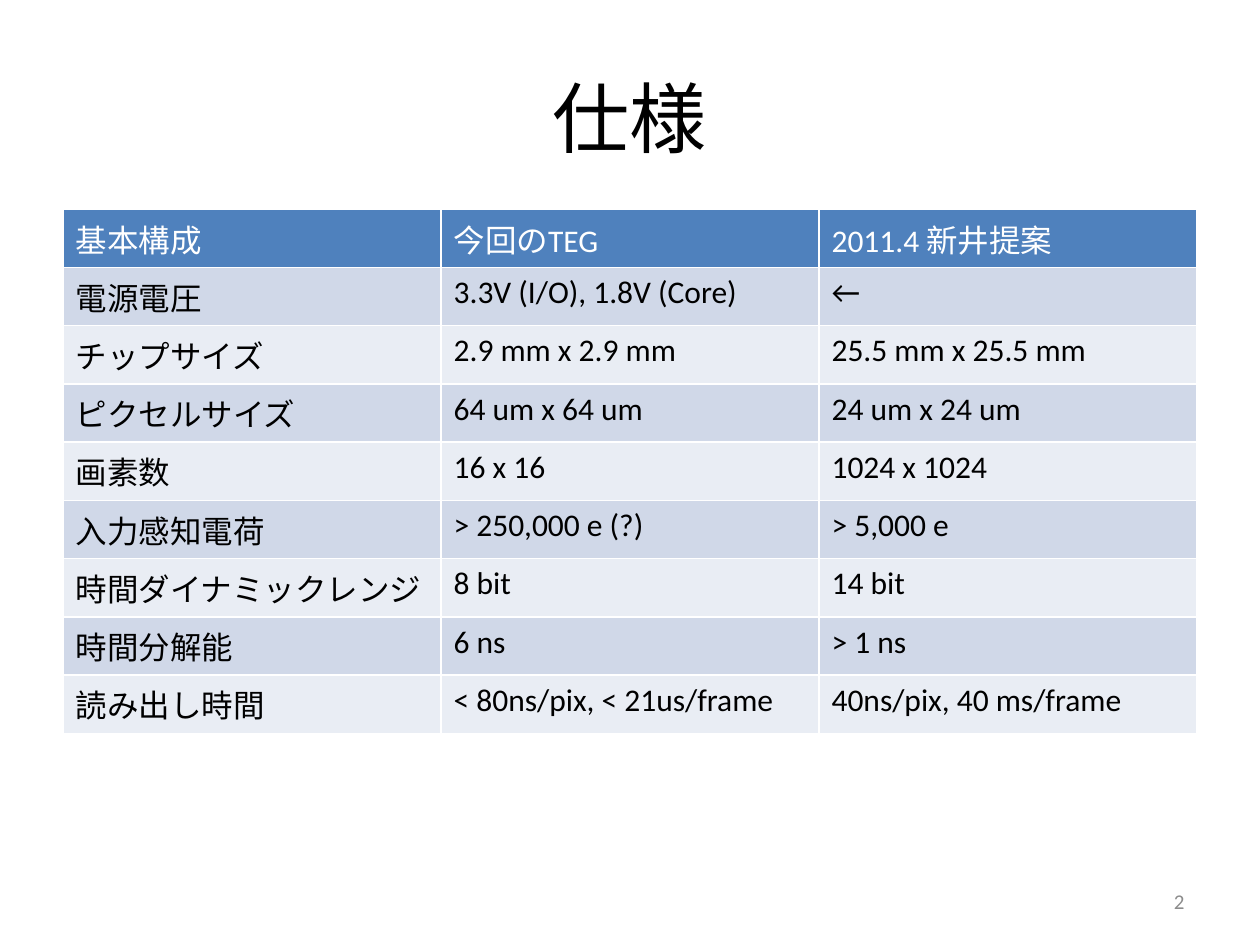
"""Build the specification comparison slide."""
import pptx
import pptx.dml.color
import pptx.enum.text
import pptx.util

RGBColor = pptx.dml.color.RGBColor
Align = pptx.enum.text.PP_ALIGN
Anchor = pptx.enum.text.MSO_ANCHOR

BLACK = RGBColor(0x00, 0x00, 0x00)
WHITE = RGBColor(0xFF, 0xFF, 0xFF)
GRAY = RGBColor(0x8C, 0x8C, 0x8C)
HEADER_BLUE = RGBColor(0x4F, 0x81, 0xBD)
BANDS = (RGBColor(0xD0, 0xD8, 0xE8), RGBColor(0xE9, 0xED, 0xF4))

WIDTH, HEIGHT = 10, 7.5
MARGIN = 0.05 * WIDTH
CONTENT_WIDTH = WIDTH - 2 * MARGIN
ROW_HEIGHT = 0.41

SPECIFICATIONS = (
    ("基本構成", "今回のTEG", "2011.4 新井提案"),
    ("電源電圧", "3.3V (I/O), 1.8V (Core)", "←"),
    ("チップサイズ", "2.9 mm x 2.9 mm", "25.5 mm x 25.5 mm"),
    ("ピクセルサイズ", "64 um x 64 um", "24 um x 24 um"),
    ("画素数", "16 x 16", "1024 x 1024"),
    ("入力感知電荷", "> 250,000 e (?)", "> 5,000 e"),
    ("時間ダイナミックレンジ", "8 bit", "14 bit"),
    ("時間分解能", "6 ns", "> 1 ns"),
    ("読み出し時間", "< 80ns/pix, < 21us/frame", "40ns/pix, 40 ms/frame"),
)


def box(left, top, width, height):
    """Convert a box in inches to slide lengths."""
    return [pptx.util.Inches(length) for length in (left, top, width, height)]


def write(frame, text, size=18, color=BLACK, align=Align.LEFT, anchor=Anchor.TOP):
    """Fill a text frame with one formatted paragraph."""
    frame.word_wrap = True
    frame.vertical_anchor = anchor
    paragraph = frame.paragraphs[0]
    paragraph.alignment = align
    run = paragraph.add_run()
    run.text = text
    run.font.name = "Calibri"
    run.font.size = pptx.util.Pt(size)
    run.font.bold = False
    run.font.color.rgb = color


def add_title(slide, text):
    """Place and fill the title placeholder."""
    title = slide.shapes.title
    title.left, title.top, title.width, title.height = box(
        MARGIN, 0.04 * HEIGHT, CONTENT_WIDTH, HEIGHT / 6)
    write(title.text_frame, text, size=44, align=Align.CENTER, anchor=Anchor.MIDDLE)


def add_specifications(slide, rows):
    """Add the table with a blue header and banded rows."""
    table = slide.shapes.add_table(
        len(rows), len(rows[0]),
        *box(MARGIN, 1.66, CONTENT_WIDTH, ROW_HEIGHT * len(rows))).table
    for row_index, row in enumerate(rows):
        is_header = row_index == 0
        for column_index, text in enumerate(row):
            cell = table.cell(row_index, column_index)
            cell.fill.solid()
            cell.fill.fore_color.rgb = HEADER_BLUE if is_header else BANDS[(row_index - 1) % 2]
            write(cell.text_frame, text, color=WHITE if is_header else BLACK)


def add_page_number(slide, number):
    """Add the page number at the lower right."""
    width = 2.33
    page = slide.shapes.add_textbox(*box(WIDTH - MARGIN - width, 6.95, width, 0.4))
    write(page.text_frame, number, size=12, color=GRAY,
          align=Align.RIGHT, anchor=Anchor.MIDDLE)


def main():
    """Assemble and save the slide."""
    presentation = pptx.Presentation()
    presentation.slide_width = pptx.util.Inches(WIDTH)
    presentation.slide_height = pptx.util.Inches(HEIGHT)
    slide = presentation.slides.add_slide(presentation.slide_layouts.get_by_name("Title Only"))
    add_title(slide, "仕様")
    add_specifications(slide, SPECIFICATIONS)
    add_page_number(slide, "2")
    presentation.save("out.pptx")


if __name__ == "__main__":
    main()
